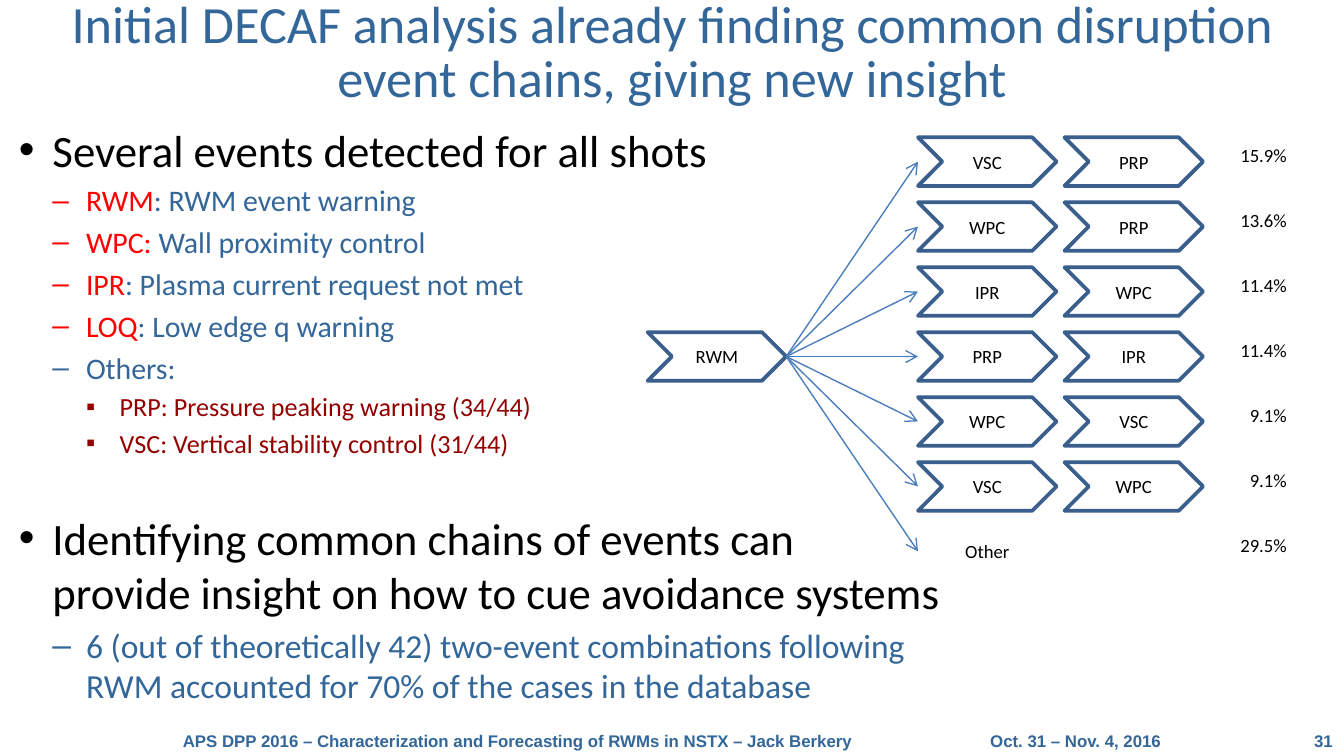
from lxml.etree import SubElement
from pptx import Presentation
from pptx.dml.color import RGBColor
from pptx.enum.shapes import MSO_CONNECTOR, MSO_SHAPE
from pptx.enum.text import MSO_ANCHOR, PP_ALIGN
from pptx.oxml.ns import qn
from pptx.util import Pt

WHITE = RGBColor(0xFF, 0xFF, 0xFF)
BLACK = RGBColor(0x00, 0x00, 0x00)
BLUE = RGBColor(0x33, 0x66, 0x99)
RED = RGBColor(0xFF, 0x00, 0x00)
MAROON = RGBColor(0x92, 0x00, 0x00)
OUTLINE = RGBColor(0x3A, 0x5F, 0x8C)
ARROW = RGBColor(0x4B, 0x7E, 0xBC)

TITLE = ("Initial DECAF analysis already finding common disruption "
         "event chains, giving new insight")
FOOTER = "APS DPP 2016 – Characterization and Forecasting of RWMs in NSTX – Jack Berkery"
DATE = "Oct. 31 – Nov. 4, 2016"

# Each item: level, size, runs of (text, colour)
EVENTS = [
    (0, 24, [("Several events detected for all shots", BLACK)]),
    (1, 16, [("RWM", RED), (": RWM event warning", BLUE)]),
    (1, 16, [("WPC:", RED), (" Wall proximity control", BLUE)]),
    (1, 16, [("IPR", RED), (": Plasma current request not met", BLUE)]),
    (1, 16, [("LOQ", RED), (": Low edge q warning", BLUE)]),
    (1, 16, [("Others:", BLUE)]),
    (2, 14, [("PRP: Pressure peaking warning (34/44)", MAROON)]),
    (2, 14, [("VSC: Vertical stability control (31/44)", MAROON)]),
]
INSIGHT = [
    (0, 24, [("Identifying common chains of events can "
              "provide insight on how to cue avoidance systems", BLACK)]),
    (1, 18, [("6 (out of theoretically 42) two-event combinations following "
              "RWM accounted for 70% of the cases in the database", BLUE)]),
]
CHAINS = [
    (["VSC", "PRP"], "15.9%"),
    (["WPC", "PRP"], "13.6%"),
    (["IPR", "WPC"], "11.4%"),
    (["PRP", "IPR"], "11.4%"),
    (["WPC", "VSC"], "9.1%"),
    (["VSC", "WPC"], "9.1%"),
    (["Other"], "29.5%"),
]
BULLETS = "•–▪"
INDENT = 18
EVENT_WIDTH, EVENT_HEIGHT = 74.2, 26


def style(run, size, color, name="Calibri", bold=False):
    run.font.name = name
    run.font.size = Pt(size)
    run.font.bold = bold
    run.font.color.rgb = color


def add_text_frame(slide, left, top, width, height):
    box = slide.shapes.add_textbox(Pt(left), Pt(top), Pt(width), Pt(height))
    box.text_frame.word_wrap = True
    return box.text_frame


def add_label(slide, box, text, size, color, align, **font):
    frame = add_text_frame(slide, *box)
    frame.text = text
    frame.paragraphs[0].alignment = align
    style(frame.paragraphs[0].runs[0], size, color, **font)
    return frame


def add_title(slide, left, top, width, height):
    frame = add_label(slide, (left, top, width, height), TITLE, 28, BLUE, PP_ALIGN.CENTER)
    frame.margin_left = frame.margin_right = Pt(3.6)
    frame.vertical_anchor = MSO_ANCHOR.MIDDLE
    frame.paragraphs[0].line_spacing = 0.85


def add_outline(slide, items, left, top, width, height):
    frame = add_text_frame(slide, left, top, width, height)
    for index, (level, size, parts) in enumerate(items):
        paragraph = frame.paragraphs[0] if index == 0 else frame.add_paragraph()
        paragraph.level = level
        if index:
            paragraph.space_before = Pt(size * 0.2)
        properties = paragraph._p.get_or_add_pPr()
        properties.set("marL", str(Pt(INDENT * (level + 1))))
        properties.set("indent", str(Pt(-INDENT)))
        SubElement(properties, qn("a:buFont"), typeface="Arial")
        SubElement(properties, qn("a:buChar"), char=BULLETS[level])
        for text, color in parts:
            run = paragraph.add_run()
            run.text = text
            style(run, size, color)


def add_event(slide, text, left, top, outlined=True):
    event = slide.shapes.add_shape(MSO_SHAPE.CHEVRON, Pt(left), Pt(top),
                                   Pt(EVENT_WIDTH), Pt(EVENT_HEIGHT))
    event.shadow.inherit = False
    event.fill.background()
    if outlined:
        event.line.color.rgb = OUTLINE
        event.line.width = Pt(2)
    else:
        event.line.fill.background()
    frame = event.text_frame
    frame.text = text
    frame.vertical_anchor = MSO_ANCHOR.MIDDLE
    frame.paragraphs[0].alignment = PP_ALIGN.CENTER
    style(frame.paragraphs[0].runs[0], 10, BLACK)
    return event


def add_arrow(slide, source, x, y):
    arrow = slide.shapes.add_connector(MSO_CONNECTOR.STRAIGHT, 0, 0, Pt(x), Pt(y))
    arrow.begin_connect(source, 3)
    arrow.line.color.rgb = ARROW
    arrow.line.width = Pt(0.75)
    SubElement(arrow.line._get_or_add_ln(), qn("a:tailEnd"), type="arrow")
    SubElement(arrow._element.spPr, qn("a:effectLst"))


def add_chain_diagram(slide, left, top, width, height):
    pitch = (height - EVENT_HEIGHT) / (len(CHAINS) - 1)
    chain_left = left + 144.8
    # Starting event, level with the middle chain
    start = add_event(slide, "RWM", left, top + pitch * (len(CHAINS) // 2))
    for row, (events, share) in enumerate(CHAINS):
        y = top + row * pitch
        for column, event in enumerate(events):
            add_event(slide, event, chain_left + column * 78.5, y, event != "Other")
        add_arrow(slide, start, chain_left, y + EVENT_HEIGHT / 2)
        # Share of cases
        add_label(slide, (left + width - 46, y, 46, 19.4), share, 10, BLACK, PP_ALIGN.RIGHT)


def add_footer(slide, left, top, width, height):
    # Talk and date, set apart by a tab stop
    talk = add_text_frame(slide, left, top, width - 60, height)
    paragraph = talk.paragraphs[0]
    tabs = SubElement(paragraph._p.get_or_add_pPr(), qn("a:tabLst"))
    SubElement(tabs, qn("a:tab"), pos=str(Pt(432.5)), algn="l")
    run = paragraph.add_run()
    run.text = f"{FOOTER}\t{DATE}"
    style(run, 9, BLUE, "Arial", True)
    # Slide number
    number = add_label(slide, (left + width - 48, top, 48, height), "31", 9, BLUE,
                       PP_ALIGN.RIGHT, name="Arial", bold=True)
    for frame in (talk, number):
        frame.margin_left = frame.margin_right = 0
        frame.margin_top = frame.margin_bottom = Pt(2.9)


def main():
    deck = Presentation()
    deck.slide_width, deck.slide_height = Pt(720), Pt(405)
    slide = deck.slides.add_slide(deck.slide_layouts[6])
    slide.background.fill.solid()
    slide.background.fill.fore_color.rgb = WHITE
    add_footer(slide, 98, 388.8, 616, 16.5)
    add_title(slide, 0, 0, 720, 58.3)
    add_outline(slide, INSIGHT, 3, 270, 507.6, 114.5)
    add_chain_diagram(slide, 347, 73.6, 349.3, 234.8)
    add_outline(slide, EVENTS, 3, 62, 406.8, 170.6)
    deck.save("out.pptx")


if __name__ == "__main__":
    main()
